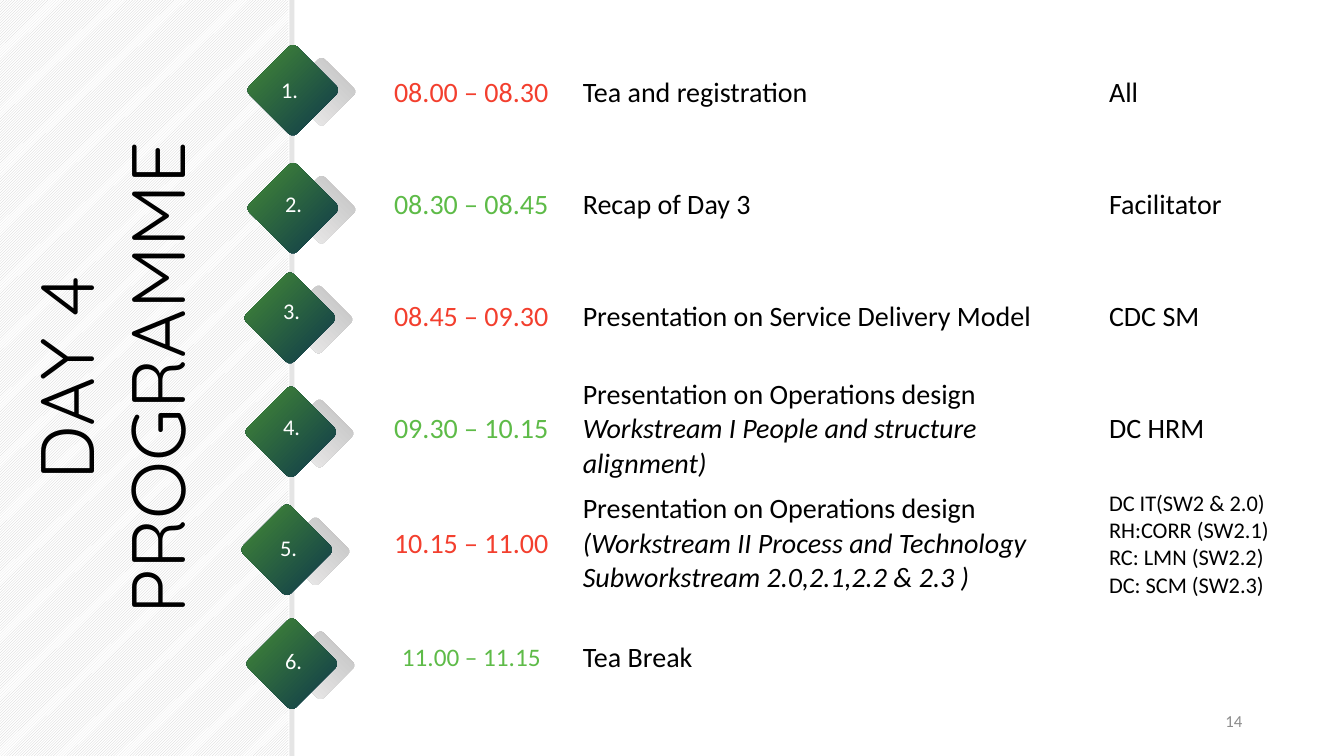
import pptx
import pptx.util
import pptx.dml.color
import pptx.enum.dml
import pptx.enum.shapes
import pptx.enum.text

PX = 9144
ALIGN = pptx.enum.text.PP_ALIGN
MIDDLE = pptx.enum.text.MSO_ANCHOR.MIDDLE
SHAPE = pptx.enum.shapes.MSO_SHAPE
THEME = {
    "body": "Calibri", "heading": "Quicksand",
    "black": "000000", "white": "FFFFFF", "hatch": "CECECE", "rule": "E5E5E5",
    "number": "8C8C8C", "red": "F33F2E", "green": "5EBB48",
    "diamond": ("0C344C", "468E35"), "shade": ("BFBEBE", "F2F2F2"),
    "title_size": 54, "row_size": 20, "break_size": 18, "small_size": 16, "number_size": 12,
}


def rgb(value):
    return pptx.dml.color.RGBColor.from_string(value)


def write(tf, lines, size, color, align=ALIGN.LEFT, font=THEME["body"], italic_from=9):
    for i, line in enumerate(lines):
        p = tf.paragraphs[0] if i == 0 else tf.add_paragraph()
        p.alignment = align
        r = p.add_run()
        r.text = line
        formats = {"name": font, "size": pptx.util.Pt(size), "italic": i >= italic_from}
        for name, value in formats.items():
            setattr(r.font, name, value)
        r.font.color.rgb = rgb(color)


prs = pptx.Presentation()
prs.slide_width, prs.slide_height = 1333 * PX, 750 * PX
s = prs.slides.add_slide(prs.slide_layouts[6])

panel = s.shapes.add_shape(SHAPE.RECTANGLE, -1 * PX, 0, 287 * PX, 750 * PX)
panel.fill.patterned()
panel.fill.pattern = pptx.enum.dml.MSO_PATTERN.LIGHT_UPWARD_DIAGONAL
panel.fill.fore_color.rgb = rgb(THEME["hatch"])
panel.fill.back_color.rgb = rgb(THEME["white"])
rule = s.shapes.add_shape(SHAPE.RECTANGLE, 287 * PX, 0, 5 * PX, 750 * PX)
rule.fill.solid()
rule.fill.fore_color.rgb = rgb(THEME["rule"])
for sp in (panel, rule):
    sp.line.fill.background()
    sp.shadow.inherit = False

page = s.shapes.add_textbox(942 * PX, 695 * PX, 300 * PX, 40 * PX)
page.text_frame.word_wrap = True
page.text_frame.vertical_anchor = MIDDLE
write(page.text_frame, ["14"], THEME["number_size"], THEME["number"], ALIGN.RIGHT)

title = s.shapes.add_textbox(-187 * PX, 284 * PX, 594 * PX, 182 * PX)
title.rotation = 270
tf = title.text_frame
tf.word_wrap = True
for side in ("left", "right", "top", "bottom"):
    setattr(tf, "margin_" + side, 0)
write(tf, ["DAY 4 PROGRAMME"], THEME["title_size"], THEME["black"], ALIGN.CENTER, THEME["heading"])

markers = [
    (257, 56, 269, 71), (257, 173, 273, 184), (254, 282, 271, 290),
    (255, 395, 271, 405), (251, 512, 268, 525), (256, 625, 273, 637),
]
for n, (x, y, label_x, label_y) in enumerate(markers, 1):
    marker = s.shapes.add_group_shape()
    for left, top, side, angle, colors in (
        (x + 37, y + 10, 50, 315, THEME["shade"]),
        (x, y, 67, 45, THEME["diamond"]),
    ):
        sp = marker.shapes.add_shape(SHAPE.ROUNDED_RECTANGLE, left * PX, top * PX, side * PX, side * PX)
        sp.adjustments[0] = 0.09
        sp.rotation = angle
        sp.fill.gradient()
        sp.fill.gradient_angle = 180
        for stop, color, position in zip(sp.fill.gradient_stops, colors, (0, 1)):
            stop.color.rgb = rgb(color)
            stop.position = position
        sp.line.fill.background()
        sp.shadow.inherit = False
    label = s.shapes.add_textbox(label_x * PX, label_y * PX, 37 * PX, 37 * PX)
    label.text_frame.word_wrap = False
    write(label.text_frame, [f"{n}."], THEME["small_size"], THEME["white"])

programme = [
    ("08.00 – 08.30", ["Tea and registration"], ["All"]),
    ("08.30 – 08.45", ["Recap of Day 3"], ["Facilitator"]),
    ("08.45 – 09.30", ["Presentation on Service Delivery Model"], ["CDC SM"]),
    ("09.30 – 10.15", ["Presentation on Operations design",
                       "Workstream I People and structure alignment)"], ["DC HRM"]),
    ("10.15 – 11.00", ["Presentation on Operations design",
                       "(Workstream II Process and Technology",
                       "Subworkstream 2.0,2.1,2.2 & 2.3 )"],
     ["DC IT(SW2 & 2.0)", "RH:CORR (SW2.1)", "RC: LMN (SW2.2)", "DC: SCM (SW2.3)"]),
    ("11.00 – 11.15", ["Tea Break"], []),
]
frame = s.shapes.add_table(len(programme), 3, 367 * PX, 37 * PX, 910 * PX, 666 * PX)
table = frame.table
table.first_row = table.horz_banding = False
style = table._tbl.tblPr.find(pptx.oxml.ns.qn("a:tableStyleId"))
style.text = "{2D5ABB26-0587-4C30-8999-92F81FD0307C}"
for column, width in zip(table.columns, (201, 522, 187)):
    column.width = width * PX
for i, (time, topic, presenter) in enumerate(programme):
    table.rows[i].height = 111 * PX
    cells = table.rows[i].cells
    for cell in cells:
        cell.fill.background()
        cell.vertical_anchor = MIDDLE
    time_size = THEME["break_size"] if topic == ["Tea Break"] else THEME["row_size"]
    presenter_size = THEME["small_size"] if len(presenter) > 1 else THEME["row_size"]
    write(cells[0].text_frame, [time], time_size, THEME["green" if i % 2 else "red"], ALIGN.CENTER)
    write(cells[1].text_frame, topic, THEME["row_size"], THEME["black"], italic_from=1)
    write(cells[2].text_frame, presenter, presenter_size, THEME["black"])

prs.save("out.pptx")
